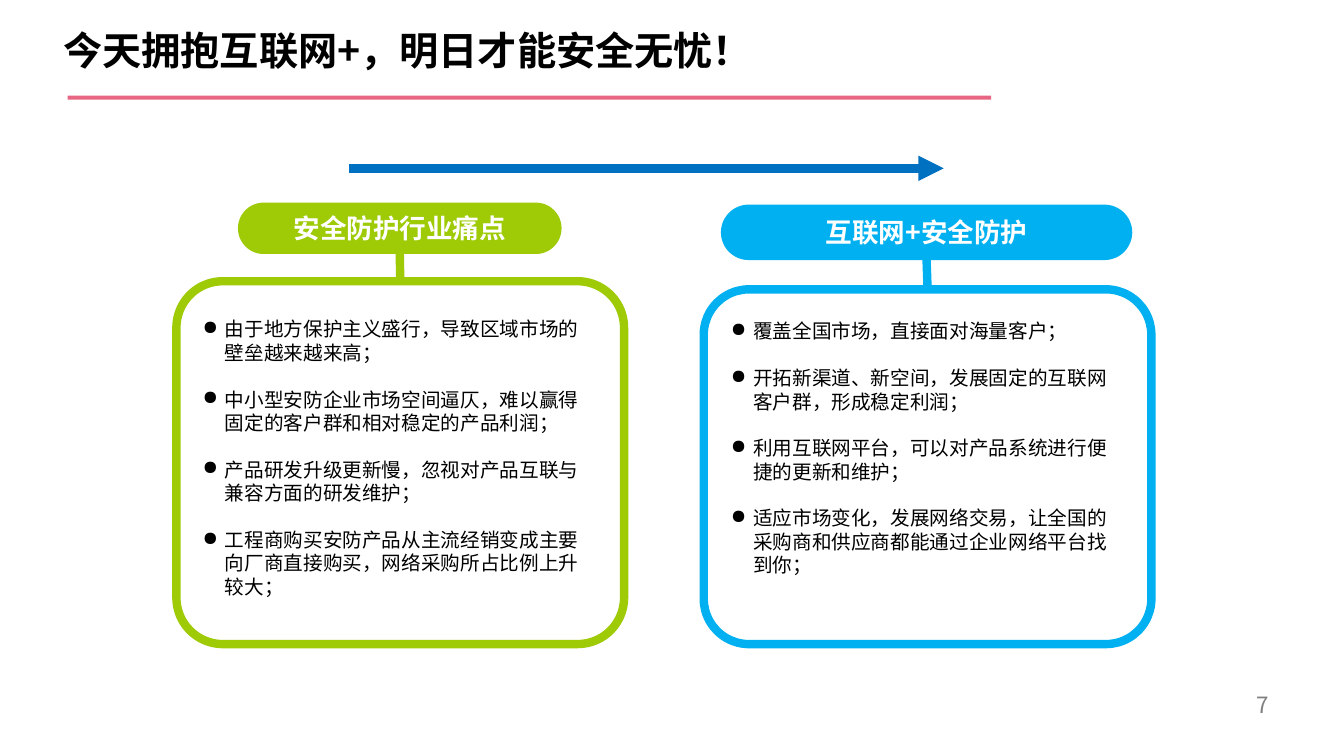
from dataclasses import dataclass

import pptx
import pptx.dml.color
import pptx.enum.shapes
import pptx.enum.text
import pptx.oxml.ns
import pptx.util
from lxml import etree

Inches = pptx.util.Inches
Pt = pptx.util.Pt
PP_ALIGN = pptx.enum.text.PP_ALIGN
ANCHOR = pptx.enum.text.MSO_ANCHOR
SHAPE = pptx.enum.shapes.MSO_SHAPE
qn = pptx.oxml.ns.qn

FONT = "Noto Sans CJK SC"
BODY_PITCH = 16.7
INDENT = 0.22

Box = tuple[float, float, float, float]


@dataclass(frozen=True)
class Column:
    heading: str
    color: str
    heading_box: Box
    panel_box: Box
    points_box: Box
    points: tuple[str, ...]


COLUMNS = (
    Column(
        "安全防护行业痛点", "9ECA06",
        (2.36, 2.01, 3.21, 0.51), (1.75, 2.79, 4.44, 3.6), (1.89, 3.09, 4, 2.93),
        (
            "由于地方保护主义盛行，导致区域市场的壁垒越来越来高；",
            "中小型安防企业市场空间逼仄，难以赢得固定的客户群和相对稳定的产品利润；",
            "产品研发升级更新慢，忽视对产品互联与兼容方面的研发维护；",
            "工程商购买安防产品从主流经销变成主要向厂商直接购买，网络采购所占比例上升较大；",
        ),
    ),
    Column(
        "互联网+安全防护", "00B0F0",
        (7.15, 2.03, 4.08, 0.55), (6.98, 2.87, 4.44, 3.52), (7.13, 3.11, 4.1, 2.7),
        (
            "覆盖全国市场，直接面对海量客户；",
            "开拓新渠道、新空间，发展固定的互联网客户群，形成稳定利润；",
            "利用互联网平台，可以对产品系统进行便捷的更新和维护；",
            "适应市场变化，发展网络交易，让全国的采购商和供应商都能通过企业网络平台找到你；",
        ),
    ),
)


def rgb(color: str):
    return pptx.dml.color.RGBColor.from_string(color)


def style(paragraph, size: float, color: str, bold: bool = False) -> None:
    for run in paragraph.runs:
        run.font.size = Pt(size)
        run.font.bold = bold
        run.font.color.rgb = rgb(color)
        run.font.name = FONT
        east_asian = etree.Element(qn("a:ea"), typeface=FONT)
        run.font._element.find(qn("a:latin")).addnext(east_asian)


def add_block(slide, kind, box: Box, fill: str, outline: str = "", corner: float = 0):
    block = slide.shapes.add_shape(kind, *map(Inches, box))
    block.shadow.inherit = False
    block.fill.solid()
    block.fill.fore_color.rgb = rgb(fill)
    if outline:
        block.line.color.rgb = rgb(outline)
        block.line.width = Pt(6)
    else:
        block.line.fill.background()
    if corner:
        block.adjustments[0] = corner
    return block


def add_line(slide, start: tuple[float, float], end: tuple[float, float], color: str):
    line = slide.shapes.add_connector(
        pptx.enum.shapes.MSO_CONNECTOR.STRAIGHT, *map(Inches, (*start, *end)))
    line.line.color.rgb = rgb(color)
    line.line.width = Pt(6)
    etree.SubElement(line._element.spPr, qn("a:effectLst"))
    return line


def add_text(slide, box: Box, text: str, size: float, color: str, pitch: float,
             bold: bool = False):
    frame = slide.shapes.add_textbox(*map(Inches, box)).text_frame
    frame.word_wrap = True
    frame.text = text
    for paragraph in frame.paragraphs:
        paragraph.line_spacing = Pt(pitch)
        style(paragraph, size, color, bold)
    return frame


def add_points(slide, box: Box, points: tuple[str, ...]) -> None:
    frame = add_text(slide, box, "\n".join(points), 14, "000000", BODY_PITCH)
    frame.margin_left = frame.margin_right = Inches(0.12)
    frame.margin_top = frame.margin_bottom = Inches(0.06)
    for index, paragraph in enumerate(frame.paragraphs):
        if index:
            paragraph.space_before = Pt(BODY_PITCH)
        properties = paragraph._p.get_or_add_pPr()
        properties.set("marL", str(Inches(INDENT)))
        properties.set("indent", str(-Inches(INDENT)))
        etree.SubElement(properties, qn("a:buChar"), char="●")


def add_column(slide, column: Column) -> None:
    heading = add_block(slide, SHAPE.ROUNDED_RECTANGLE, column.heading_box,
                        column.color, corner=0.5)
    frame = heading.text_frame
    frame.text = column.heading
    frame.vertical_anchor = ANCHOR.MIDDLE
    frame.paragraphs[0].alignment = PP_ALIGN.CENTER
    style(frame.paragraphs[0], 19, "FFFFFF", True)

    panel = add_block(slide, SHAPE.ROUNDED_RECTANGLE, column.panel_box,
                      "FFFFFF", column.color, 0.128)
    stem = add_line(slide, (0, 0), (1, 1), column.color)
    stem.begin_connect(heading, 2)
    stem.end_connect(panel, 0)
    add_points(slide, column.points_box, column.points)


def main() -> None:
    presentation = pptx.Presentation()
    presentation.slide_width = Inches(13.33)
    presentation.slide_height = Inches(7.5)
    slide = presentation.slides.add_slide(presentation.slide_layouts[6])

    for column in COLUMNS:
        add_column(slide, column)

    arrow = add_line(slide, (3.46, 1.67), (9.36, 1.67), "0070C0")
    etree.SubElement(arrow.line._get_or_add_ln(), qn("a:tailEnd"), type="triangle")

    add_text(slide, (12.36, 6.8, 0.89, 0.32), "7", 16, "808080", 20)
    add_text(slide, (0.53, 0.25, 10.5, 0.68), "今天拥抱互联网+，明日才能安全无忧！",
             28, "000000", 31, bold=True)
    add_block(slide, SHAPE.RECTANGLE, (0.67, 0.95, 9.16, 0.04), "E66684")

    presentation.save("out.pptx")


if __name__ == "__main__":
    main()
